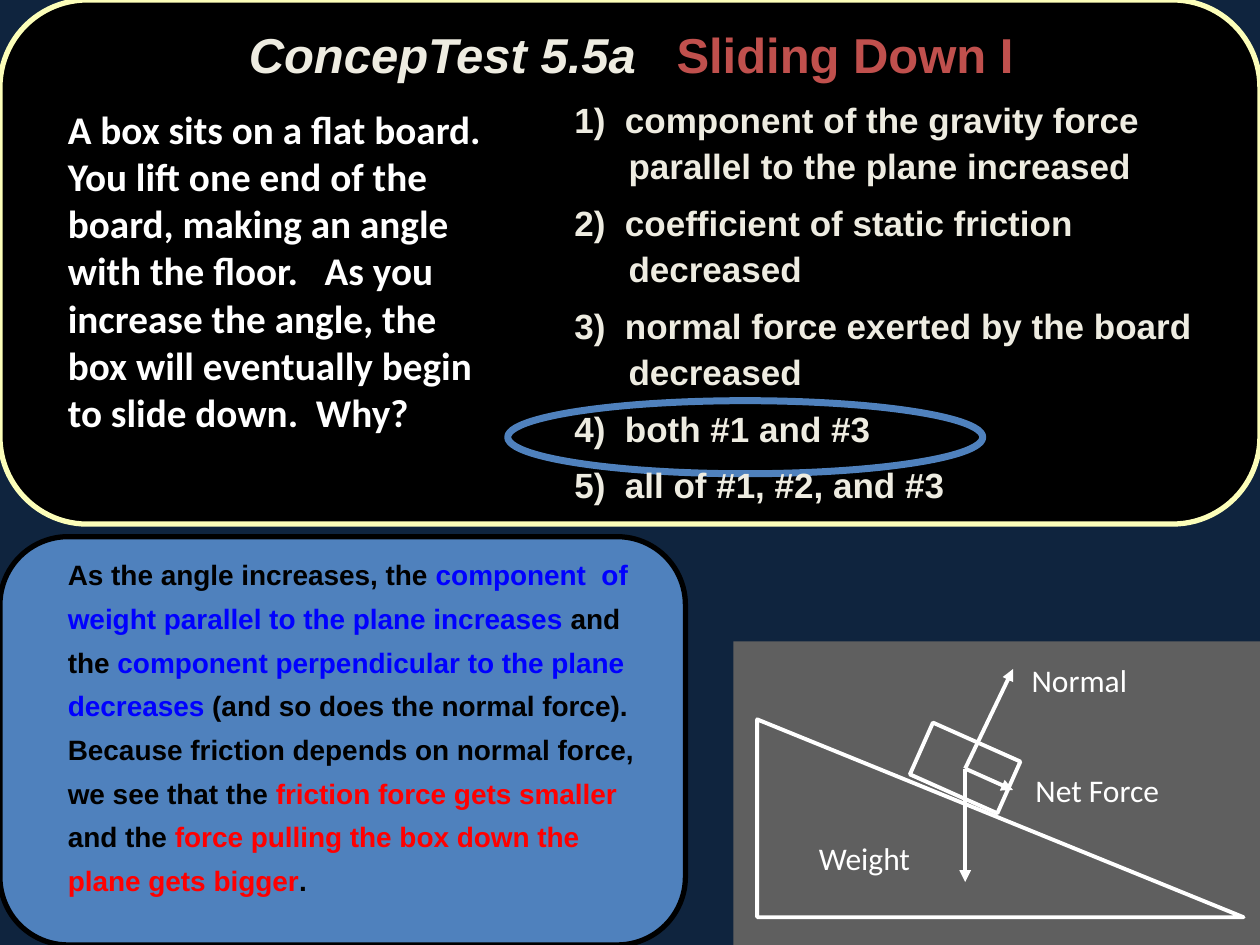
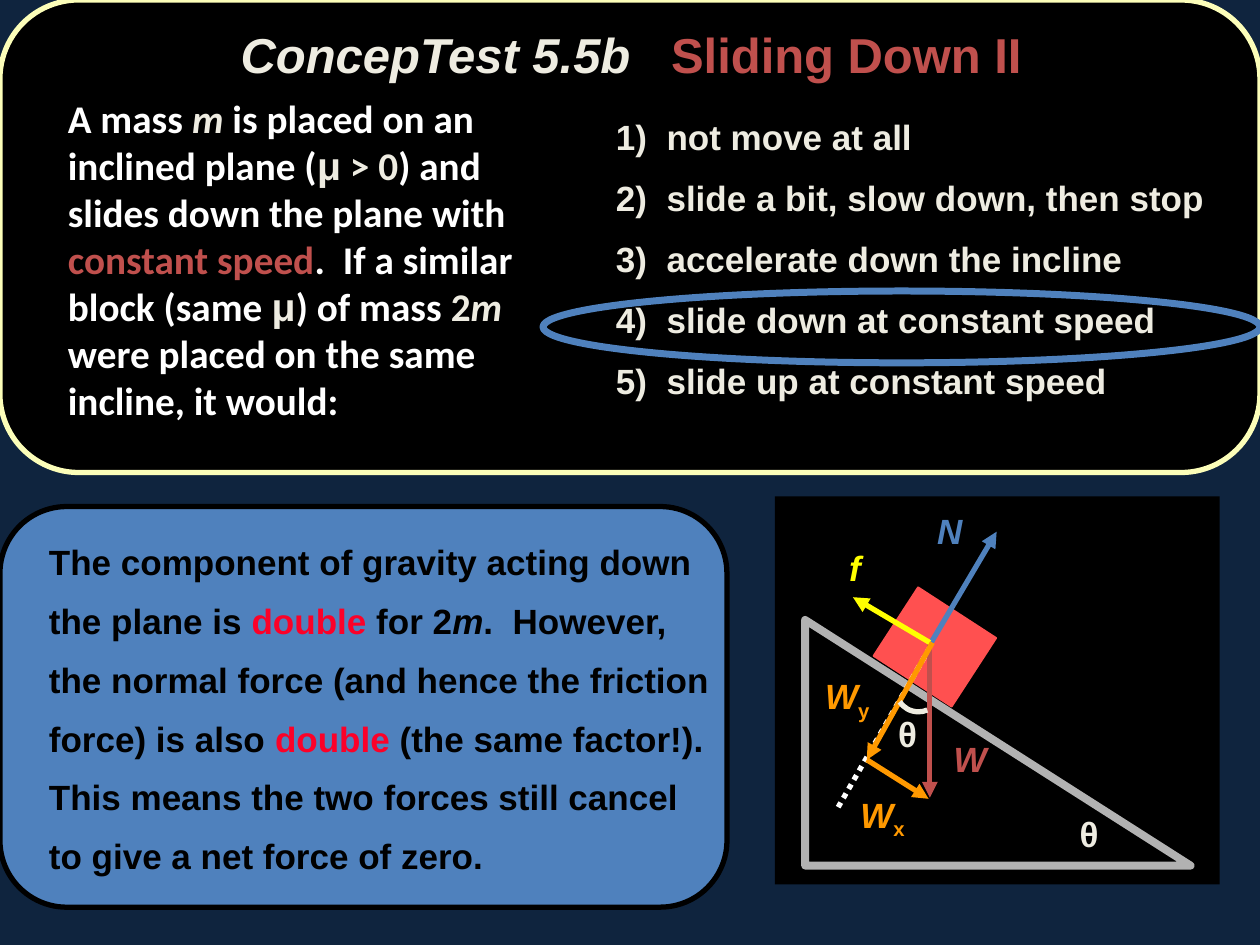
from lxml.etree import SubElement
from pptx import Presentation
from pptx.dml.color import RGBColor
from pptx.enum.dml import MSO_LINE
from pptx.enum.shapes import MSO_CONNECTOR, MSO_SHAPE
from pptx.enum.text import MSO_ANCHOR, PP_ALIGN
from pptx.oxml.ns import qn
from pptx.util import Inches, Pt

COLUMNS, ROWS = 100, 75
COLOURS = {
    "navy": "0F243E", "black": "000000", "white": "FFFFFF", "cream": "EEECE1",
    "pale yellow": "FCFEB9", "steel": "4F81BD", "brick": "C0504D",
    "blue": "0000FF", "red": "FF0000", "crimson": "FC0128", "dark grey": "5F5F5F",
    "grey": "B2B2B2", "coral": "FF5050", "yellow": "FFFF00", "orange": "FF9900",
}


class Deck:
    """Slide style and the page being filled; lengths are grid columns and rows."""

    def __init__(self):
        self.deck = Presentation()
        self.deck.slide_width, self.deck.slide_height = Inches(10), Inches(7.5)
        self.column = self.deck.slide_width / COLUMNS
        self.row = self.deck.slide_height / ROWS

    def new_page(self):
        self.page = self.deck.slides.add_slide(self.deck.slide_layouts[6])
        self.page.background.fill.solid()
        self.page.background.fill.fore_color.rgb = self.colour("navy")
        self.shapes = self.page.shapes

    def start_group(self):
        self.shapes = self.page.shapes.add_group_shape().shapes

    def end_group(self):
        self.shapes = self.page.shapes

    def colour(self, name):
        return RGBColor.from_string(COLOURS[name])

    def place(self, *lengths):
        """Turn alternating columns and rows into slide lengths."""
        return [round(length * (self.row if index % 2 else self.column))
                for index, length in enumerate(lengths)]

    def shape(self, kind, area, fill=None, line=None, width=1, turn=0):
        shape = self.shapes.add_shape(kind, *self.place(*area))
        shape.shadow.inherit = False
        shape.rotation = turn
        if fill:
            shape.fill.solid()
            shape.fill.fore_color.rgb = self.colour(fill)
        else:
            shape.fill.background()
        if line:
            shape.line.color.rgb = self.colour(line)
            shape.line.width = Pt(width)
        else:
            shape.line.fill.background()
        return shape

    def panel(self, area, fill, line):
        self.shape(MSO_SHAPE.ROUNDED_RECTANGLE, area, fill, line, 3)

    def answer_ring(self, area):
        self.shape(MSO_SHAPE.OVAL, area, line="steel", width=4)

    def line(self, start, end, colour, width=3.0):
        line = self.shapes.add_connector(MSO_CONNECTOR.STRAIGHT, *self.place(*start, *end))
        line.line.color.rgb = self.colour(colour)
        line.line.width = Pt(width)
        return line

    def arrow(self, start, end, colour, width=3.0):
        arrow = self.line(start, end, colour, width)
        SubElement(arrow.line._get_or_add_ln(), qn("a:tailEnd"), type="triangle")
        SubElement(arrow._element.spPr, qn("a:effectLst"))

    def dotted(self, start, end, colour):
        line = self.line(start, end, colour)
        line.line.dash_style = MSO_LINE.ROUND_DOT
        SubElement(line._element.spPr, qn("a:effectLst"))

    def text(self, area, paragraphs, colour, size=20, font="Arial", bold=True,
             italic=False, spacing=1.0, gap=0, hanging=0, align=None, anchor=MSO_ANCHOR.TOP):
        """Each paragraph is a list of spans: text, colour or None, font settings."""
        frame = self.shapes.add_textbox(*self.place(*area)).text_frame
        frame.word_wrap = True
        frame.vertical_anchor = anchor
        for index, spans in enumerate(paragraphs):
            para = frame.add_paragraph() if index else frame.paragraphs[0]
            para.line_spacing, para.alignment = spacing, align
            if index:
                para.space_before = Pt(gap)
            if hanging:
                indent = round(hanging * self.column)
                properties = para._p.get_or_add_pPr()
                properties.set("marL", str(indent))
                properties.set("indent", str(-indent))
            para.font.name, para.font.size = font, Pt(size)
            para.font.bold, para.font.italic = bold, italic
            para.font.color.rgb = self.colour(colour)
            for words, tint, *settings in spans:
                span = para.add_run()
                span.text = words
                if tint:
                    span.font.color.rgb = self.colour(tint)
                for name, value in (settings[0] if settings else {}).items():
                    if name == "baseline":
                        span.font._rPr.set("baseline", str(value))
                    else:
                        setattr(span.font, name, value)

    def title(self, number, topic):
        spans = [(f"ConcepTest {number}   ", None, {"italic": True}), (topic, "brick")]
        self.text((8.6, 0, 83, 9.2), [spans], "cream", 28, spacing=0.9,
                  align=PP_ALIGN.CENTER, anchor=MSO_ANCHOR.MIDDLE)

    def question(self, area, spans):
        self.text(area, [spans], "white", 22.4, "Calibri", hanging=4.4)

    def answers(self, area, choices, spacing, hanging):
        numbered = [[(f"{number})  {choice}", None)] for number, choice in enumerate(choices, 1)]
        self.text(area, numbered, "cream", spacing=spacing, gap=6, hanging=hanging)

    def explanation(self, area, spans, size, spacing):
        self.text(area, [spans], "black", size, spacing=spacing, hanging=4.4)

    def force_name(self, area, name, colour, subscript="", italic=True):
        spans = [(name, None)]
        if subscript:
            spans.append((subscript, None, {"italic": False, "baseline": -25000}))
        self.text(area, [spans], colour, italic=italic, spacing=0.9)


def force_diagram(deck):
    deck.start_group()
    deck.shape(MSO_SHAPE.RECTANGLE, (58.2, 50.9, 41.8, 24.1), "dark grey")
    deck.shape(MSO_SHAPE.RIGHT_TRIANGLE, (60.1, 57.1, 38.6, 15.7), line="white", width=2.25)
    deck.shape(MSO_SHAPE.RECTANGLE, (72.8, 58.7, 7.6, 4.5), line="white", width=2.25, turn=24)
    for tip in [(76.6, 70), (80.4, 53.1), (80.4, 62.7)]:
        deck.arrow((76.6, 61), tip, "white", 2.25)
    for name, left, top, width in [("Net Force", 81.2, 60.7, 15.7),
                                   ("Normal", 80.9, 52, 12.4), ("Weight", 64, 66.1, 12)]:
        deck.text((left, top, width, 5), [[(name, None)]], "white", 18, "Calibri", bold=False)
    deck.end_group()


def component_diagram(deck):
    deck.start_group()
    deck.shape(MSO_SHAPE.RECTANGLE, (61.5, 39.4, 35.3, 30.8), "black")
    deck.shape(MSO_SHAPE.RIGHT_TRIANGLE, (63.9, 49.2, 30.6, 19.5), line="grey", width=4.5)
    deck.force_name((84.7, 64.4, 4.4, 4), "θ", "cream", italic=False)
    deck.shape(MSO_SHAPE.RECTANGLE, (70.5, 48.1, 7.4, 6.5), "coral", "coral", turn=33)
    deck.dotted((73.8, 51.4), (66.5, 64.1), "white")
    deck.arrow((73.8, 51.1), (73.8, 63.3), "brick")
    deck.force_name((74.7, 58.4, 4.5, 4), "W", "brick")
    deck.arrow((73.9, 51), (79.1, 42.2), "steel")
    deck.force_name((73.4, 40.3, 5, 4), "N", "steel")
    deck.arrow((73.8, 51), (67.7, 47.4), "yellow")
    deck.force_name((66.4, 43.3, 5, 4), "f", "yellow")
    deck.force_name((70.3, 56.4, 4.4, 4), "θ", "cream", italic=False)
    deck.arrow((68.8, 60.3), (73.7, 63.4), "orange")
    deck.arrow((74, 51), (68.8, 60.3), "orange")
    deck.force_name((67.3, 62.5, 5.8, 4), "W", "orange", "x")
    deck.force_name((64.5, 53.1, 5.8, 4), "W", "orange", "y")
    angle_mark = deck.shape(MSO_SHAPE.ARC, (71.1, 52.9, 3.6, 3.6), line="cream", width=3)
    for index, degrees in enumerate((67, 146)):
        angle_mark.adjustments[index] = degrees * 0.6
    deck.end_group()


def sliding_down_one(deck):
    deck.new_page()
    deck.panel((0, 0, 100, 41.6), "black", "pale yellow")
    deck.answer_ring((40.3, 31.8, 37.7, 5.8))
    deck.answers((44.6, 7, 53.2, 33.3), [
        "component of the gravity force parallel to the plane increased",
        "coefficient of static friction decreased",
        "normal force exerted by the board decreased",
        "both #1 and #3",
        "all of #1, #2, and #3",
    ], 1.1, 4.3)
    deck.question((0, 7.9, 41, 29.6), [
        ("\tA box sits on a flat board.  You lift one end of the board, making an angle "
         "with the floor.   As you increase the angle, the box will eventually begin "
         "to slide down.  Why?", None)])
    force_diagram(deck)
    deck.panel((0, 42.6, 54.4, 32.4), "steel", "black")
    deck.explanation((0, 43, 52.7, 31), [
        ("\tAs the angle increases, the ", None),
        ("component  of weight parallel to the plane increases", "blue"),
        (" and the ", None),
        ("component perpendicular to the plane decreases", "blue"),
        (" (and so does the normal force).  Because friction depends on normal force, "
         "we see that the ", None),
        ("friction force gets smaller", "red"),
        (" and the ", None),
        ("force pulling the box down the plane gets bigger", "red"),
        (".", None),
    ], 16, 1.3)
    deck.title("5.5a", "Sliding Down I")


def sliding_down_two(deck):
    italic, arial = {"italic": True}, {"name": "Arial"}
    deck.new_page()
    deck.panel((0, 0, 100, 37.5), "black", "pale yellow")
    deck.answer_ring((43.1, 23.1, 56.9, 5.7))
    deck.panel((0, 40.2, 57.7, 31.8), "steel", "black")
    deck.explanation((-1.5, 41.1, 59.3, 33), [
        ("\tThe component of gravity acting down the plane is ", None),
        ("double", "crimson"),
        (" for 2", None),
        ("m", None, italic),
        (".  However, the normal force (and hence the friction force) is also ", None),
        ("double", "crimson"),
        (" (the same factor!).  This means the two forces still cancel to give "
         "a net force of zero.", None),
    ], 20, 1.4)
    deck.question((0, 7, 44.8, 29.6), [
        ("\tA mass ", None),
        ("m", "cream", italic),
        (" is placed on an inclined plane (", None),
        ("μ", "cream", arial),
        (" > 0", "cream"),
        (") and slides down the plane with ", None),
        ("constant speed", "brick"),
        (".  If a similar block (same ", None),
        ("μ", "cream", arial),
        (") of mass ", None),
        ("2", "cream"),
        ("m", "cream", italic),
        (" were placed on the same incline, it would:", None),
    ])
    component_diagram(deck)
    deck.answers((47.9, 8, 52.1, 27.3), [
        "not move at all",
        "slide a bit, slow down, then stop",
        "accelerate down the incline",
        "slide down at constant speed",
        "slide up at constant speed",
    ], 1.2, 4.4)
    deck.title("5.5b", "Sliding Down II")


def main():
    deck = Deck()
    sliding_down_one(deck)
    sliding_down_two(deck)
    deck.deck.save("out.pptx")


if __name__ == "__main__":
    main()
